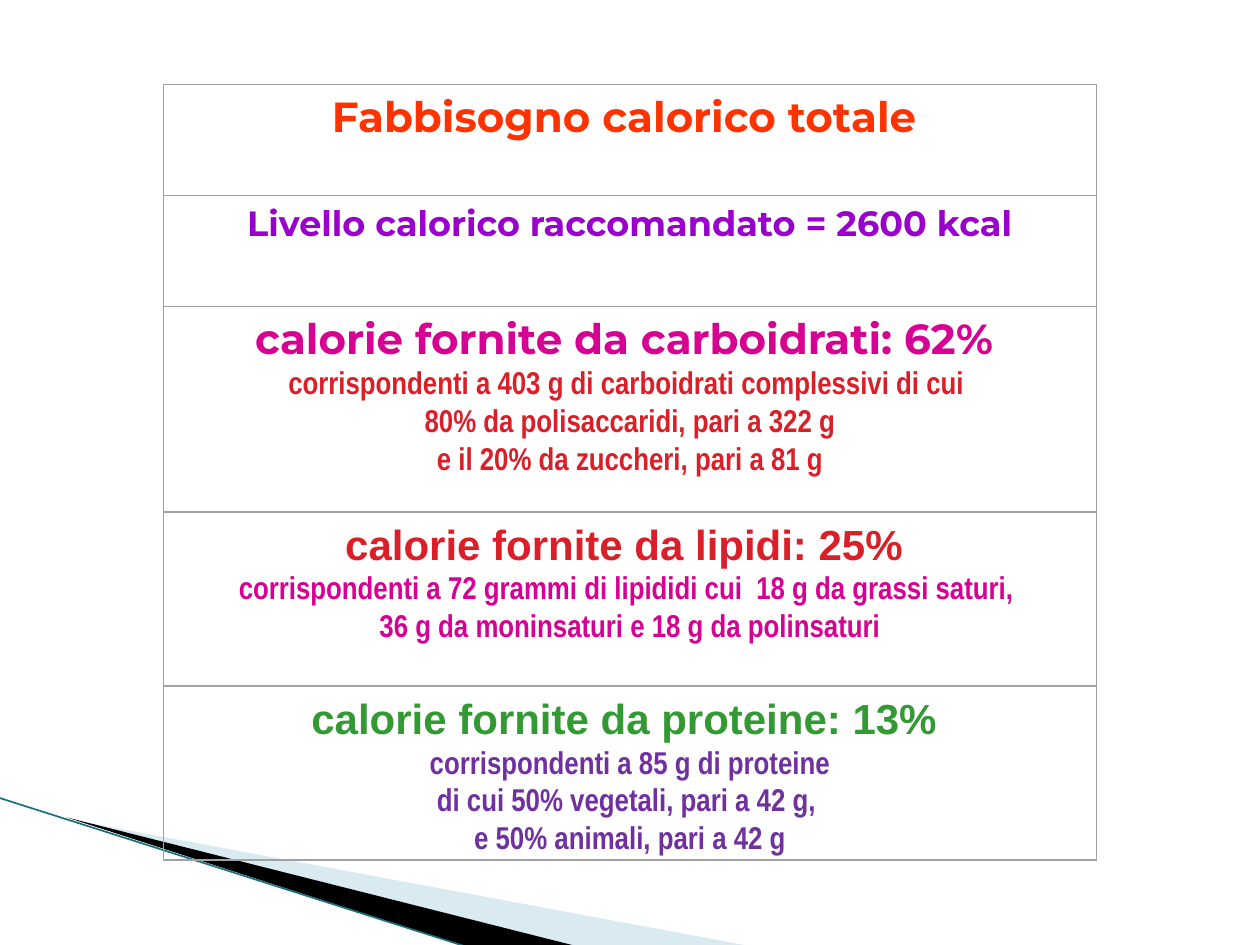
from lxml import etree
from pptx import Presentation
from pptx.dml.color import RGBColor
from pptx.enum.shapes import MSO_CONNECTOR, MSO_SHAPE
from pptx.enum.text import MSO_ANCHOR, PP_ALIGN
from pptx.oxml.ns import qn
from pptx.util import Cm, Pt

RECTANGLE = MSO_SHAPE.RECTANGLE
STRAIGHT = MSO_CONNECTOR.STRAIGHT
TOP = MSO_ANCHOR.TOP
CENTER = PP_ALIGN.CENTER

BLACK = RGBColor(0x00, 0x00, 0x00)
PALE_BLUE = RGBColor(0xA0, 0xCB, 0xDC)
TEAL = RGBColor(0x1B, 0x6F, 0x80)
GRAY = RGBColor(0xA0, 0xA0, 0xA0)
ORANGE = RGBColor(0xFF, 0x33, 0x00)
VIOLET = RGBColor(0x99, 0x00, 0xCC)
MAGENTA = RGBColor(0xD6, 0x00, 0x93)
RED = RGBColor(0xDA, 0x1F, 0x28)
GREEN = RGBColor(0x33, 0x99, 0x33)
PURPLE = RGBColor(0x70, 0x30, 0xA0)

LEFT, TABLE_TOP, WIDTH = 3.3, 1.7, 18.8

# Each row: height, heading, heading font, size, colour, details, detail colour
ROWS = [
    (2.24, "Fabbisogno calorico totale ", "Montserrat", 24, ORANGE, [], None),
    (2.24, "Livello calorico raccomandato = 2600 kcal", "Montserrat", 20, VIOLET, [], None),
    (4.14, "calorie fornite da carboidrati: 62% ", "Montserrat", 24, MAGENTA,
     ["corrispondenti a 403 g di carboidrati complessivi di cui ",
      "80% da polisaccaridi, pari a 322 g",
      "e il 20% da zuccheri, pari a 81 g"], RED),
    (3.51, "calorie fornite da lipidi: 25% ", "Arial", 24, RED,
     ["corrispondenti a 72 grammi di lipididi cui  18 g da grassi saturi, ",
      "36 g da moninsaturi e 18 g da polinsaturi"], MAGENTA),
    (3.51, "calorie fornite da proteine: 13% ", "Arial", 24, GREEN,
     ["corrispondenti a 85 g di proteine",
      "di cui 50% vegetali, pari a 42 g, ",
      "e 50% animali, pari a 42 g"], PURPLE),
]


def add_wedge(page, points, color, opacity=100):
    """Draw a filled outline through points given in centimetres."""
    corners = [(Cm(x), Cm(y)) for x, y in points]
    builder = page.shapes.build_freeform(*corners[0])
    builder.add_line_segments(corners[1:], close=True)
    wedge = builder.convert_to_shape()
    wedge.shadow.inherit = False
    wedge.fill.solid()
    wedge.fill.fore_color.rgb = color
    wedge.line.fill.background()
    if opacity < 100:
        fill_color = wedge.fill._xPr.find(qn("a:solidFill"))[0]
        etree.SubElement(fill_color, qn("a:alpha"), val=str(opacity * 1000))


def add_edge(page, start, end):
    """Draw the thin line along the corner decoration."""
    edge = page.shapes.add_connector(STRAIGHT, *map(Cm, start + end))
    edge.line.color.rgb = TEAL
    edge.line.width = Pt(0.95)
    etree.SubElement(edge._element.spPr, qn("a:effectLst"))


def add_frame(page, left, top, width, height, line_width):
    """Draw an unfilled grey rectangle and return it."""
    frame = page.shapes.add_shape(RECTANGLE, Cm(left), Cm(top), Cm(width), Cm(height))
    frame.shadow.inherit = False
    frame.fill.background()
    frame.line.color.rgb = GRAY
    frame.line.width = Pt(line_width)
    return frame


def write_line(para, text, font_name, size, color):
    """Write one centred bold line."""
    para.text = text
    para.alignment = CENTER
    para.font.name = font_name
    para.font.size = Pt(size)
    para.font.bold = True
    para.font.color.rgb = color


def add_row(page, top, height, heading, font_name, size, color, details, detail_color):
    """Draw one framed row with its heading and detail lines."""
    text_frame = add_frame(page, LEFT, top, WIDTH, height, 0).text_frame
    text_frame.word_wrap = True
    text_frame.vertical_anchor = TOP
    write_line(text_frame.paragraphs[0], heading, font_name, size, color)
    for detail in details:
        write_line(text_frame.add_paragraph(), detail, "Arial Narrow", 18, detail_color)


def main():
    """Build the slide and save the deck."""
    deck = Presentation()
    deck.slide_width, deck.slide_height = Cm(25.4), Cm(19.05)
    page = deck.slides.add_slide(deck.slide_layouts[6])

    add_wedge(page, [(1.4, 16.52), (15.11, 19.07), (11.58, 19.07)], PALE_BLUE, 40)
    add_wedge(page, [(1.35, 16.48), (11.61, 19.07), (9.45, 19.1)], BLACK)
    add_edge(page, (-0.03, 16.08), (9.45, 19.1))

    top = TABLE_TOP
    for height, *content in ROWS:
        add_row(page, top, height, *content)
        top += height
    add_frame(page, LEFT, TABLE_TOP, WIDTH, top - TABLE_TOP, 0.75)

    deck.save("out.pptx")


if __name__ == "__main__":
    main()
